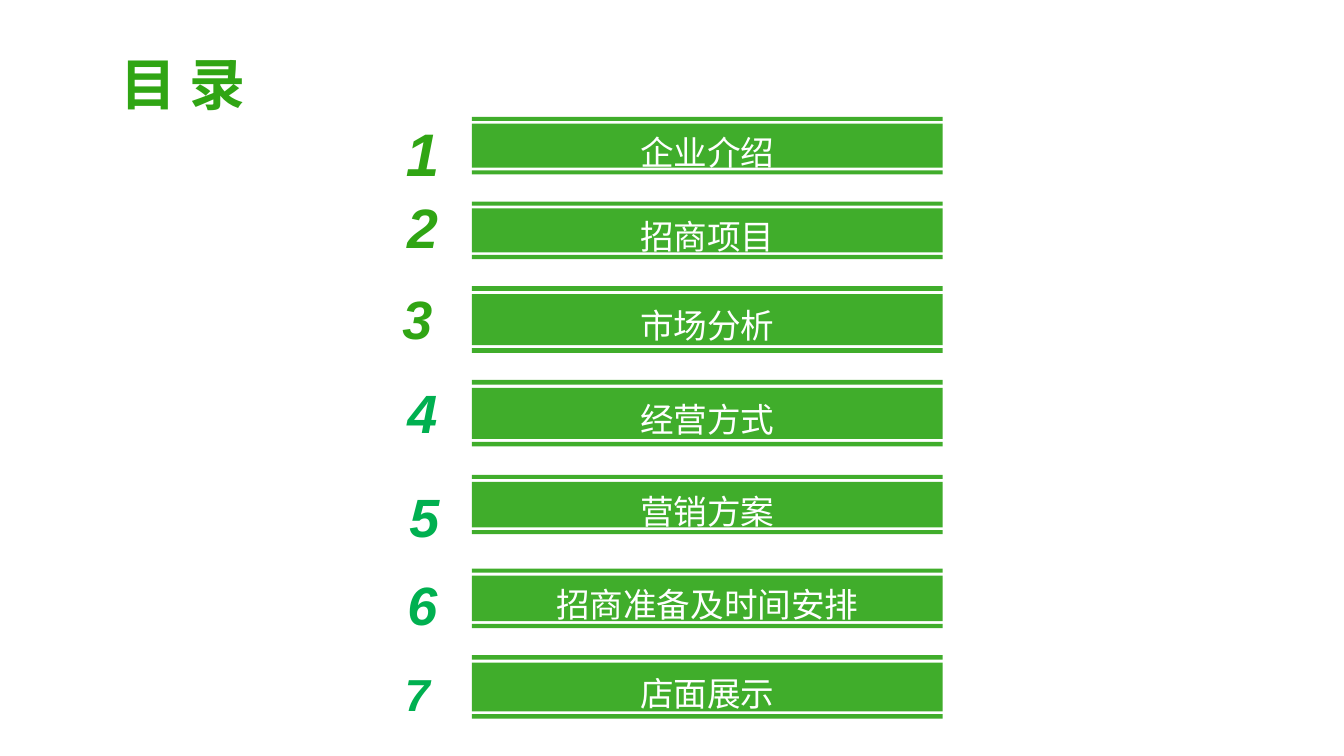
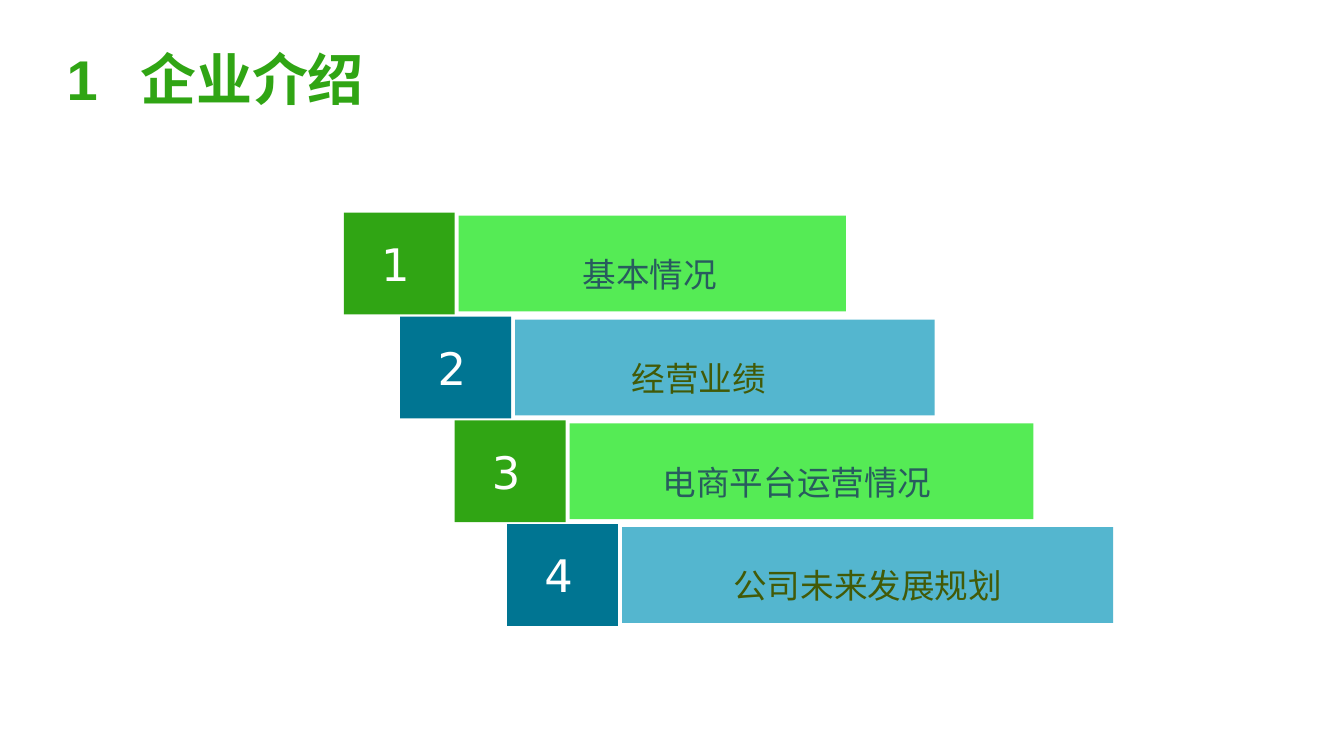
from lxml import etree
from pptx import Presentation
from pptx.dml.color import RGBColor
from pptx.enum.shapes import MSO_SHAPE
from pptx.enum.text import MSO_ANCHOR, MSO_AUTO_SIZE, PP_ALIGN
from pptx.oxml.ns import qn
from pptx.util import Inches, Pt

RECT = MSO_SHAPE.RECTANGLE
TOP, MIDDLE, BOTTOM = MSO_ANCHOR.TOP, MSO_ANCHOR.MIDDLE, MSO_ANCHOR.BOTTOM
LEFT, CENTER = PP_ALIGN.LEFT, PP_ALIGN.CENTER
FIXED = MSO_AUTO_SIZE.NONE
HEAD, HAN, DIGIT = "Arial", "Noto Sans CJK SC", "DejaVu Sans"
COLORS = {
    "green": "30A514", "bar": "40AD2B", "jade": "00B050", "white": "FFFFFF",
    "lime": "55EB55", "sky": "54B6CF", "blue": "007592",
    "teal": "285C5E", "olive": "425A07",
}
STRIPS = [(0.93, 1), (0.12, 0.885), (0, 0.07)]
AGENDA = [
    ("企业介绍", 1.16, 0.57, 4.19, 0.89, 42.9, 1.3, "green"),
    ("招商项目", 2.0, 0.57, 4.19, 1.73, 39.6, 1.2, "green"),
    ("市场分析", 2.84, 0.66, 4.14, 2.66, 38.5, 1.2, "green"),
    ("经营方式", 3.77, 0.66, 4.19, 3.65, 38.5, 1.1, "jade"),
    ("营销方案", 4.71, 0.59, 4.21, 4.62, 38.5, 1.2, "jade"),
    ("招商准备及时间安排", 5.64, 0.59, 4.19, 5.56, 38.5, 1.1, "jade"),
    ("店面展示", 6.5, 0.63, 4.14, 6.41, 32, 1.3, "jade"),
]
STEPS = [
    ("基本情况", 3.41, 3.84, 4.5, 3.89),
    ("经营业绩", 3.97, 4.16, 5.06, 3.74),
    ("电商平台运营情况", 4.51, 4.6, 5.66, 4.49),
    ("公司未来发展规划", 5.03, 4.87, 6.17, 4.87),
]
TONES = [("green", "lime", "teal"), ("blue", "sky", "olive")]


def color(name):
    """Return the named colour."""
    return RGBColor.from_string(COLORS[name])


def write(shape, text, size, tone, face=HEAD, align=CENTER, anchor=TOP,
          space=1.0, strong=False, slant=False, side=0.1):
    """Write one styled paragraph into a shape."""
    frame = shape.text_frame
    frame.auto_size = FIXED
    frame.word_wrap = True
    frame.vertical_anchor = anchor
    frame.margin_left = frame.margin_right = Inches(side)
    frame.margin_top = frame.margin_bottom = Inches(0.05)
    para = frame.paragraphs[0]
    para.alignment = align
    para.line_spacing = space
    para.space_before = Pt(0)
    run = para.add_run()
    run.text = text
    font = run.font
    font.size, font.name = Pt(size), face
    font.bold, font.italic = strong, slant
    font.color.rgb = color(tone)
    east = etree.SubElement(run._r.get_or_add_rPr(), qn("a:ea"))
    east.set("typeface", HAN)
    return para


def title(slide, text, box, **style):
    """Place and format the slide title."""
    shape = slide.shapes.title
    shape.left, shape.top, shape.width, shape.height = map(Inches, box)
    return write(shape, text, 40, "green", strong=True, **style)


def tab(para, at):
    """Set a left tab stop."""
    stops = etree.SubElement(para._p.get_or_add_pPr(), qn("a:tabLst"))
    etree.SubElement(stops, qn("a:tab"), pos=str(Inches(at)), algn="l")


def paint(shape, tone):
    """Give a shape a flat fill without line or shadow."""
    shape.shadow.inherit = False
    shape.fill.solid()
    shape.fill.fore_color.rgb = color(tone)
    shape.line.fill.background()
    return shape


def block(slide, box, tone):
    """Add a flat rectangle."""
    return paint(slide.shapes.add_shape(RECT, *map(Inches, box)), tone)


def label(slide, box, *text, **style):
    """Add a text box."""
    write(slide.shapes.add_textbox(*map(Inches, box)), *text, **style)


def banner(slide, x, y, width, height):
    """Add a bar edged by thin strips as one outline."""
    left, right = Inches(x), Inches(x + width)
    pen = None
    for start, end in STRIPS:
        top, base = Inches(y + start * height), Inches(y + end * height)
        if pen is None:
            pen = slide.shapes.build_freeform(left, top)
        else:
            pen.move_to(left, top)
        pen.add_line_segments([(right, top), (right, base), (left, base)])
    return paint(pen.convert_to_shape(), "bar")


def agenda(slide):
    """Build the contents slide."""
    title(slide, "目 录", (0.48, 0.28, 2.67, 0.88), anchor=MIDDLE, space=1.3)
    for num, row in enumerate(AGENDA, 1):
        text, y, height, mid, top, size, space, tone = row
        bar = banner(slide, 4.68, y, 4.67, height)
        write(bar, text, 24, "white", anchor=MIDDLE, space=1.3)
        label(slide, (mid - 0.29, top, 0.58, 0.92), str(num), size, tone,
              space=space, strong=True, slant=True, side=0)


def stairs(slide):
    """Build the company section slide."""
    para = title(slide, "1\t企业介绍", (0.56, 0.23, 7.38, 0.94),
                 align=LEFT, anchor=BOTTOM, space=0.9)
    tab(para, 0.73)
    for i, (text, x, width, start, span) in enumerate(STEPS):
        y = 2.11 + 1.03 * i
        dark, light, ink = TONES[i % 2]
        block(slide, (x + 1.14, y + 0.03, width, 0.95), light)
        label(slide, (start, y + 0.16, span, 0.7), text, 24, ink,
              face=HAN, space=1.5)
        badge = block(slide, (x, y, 1.1, 1.01), dark)
        write(badge, str(i + 1), 32, "white", face=DIGIT, align=LEFT,
              anchor=MIDDLE, side=0.37)


def main():
    """Build and save the deck."""
    deck = Presentation()
    deck.slide_width, deck.slide_height = Inches(13.33), Inches(7.5)
    for build in (agenda, stairs):
        build(deck.slides.add_slide(deck.slide_layouts[5]))
    deck.save("out.pptx")


if __name__ == "__main__":
    main()
